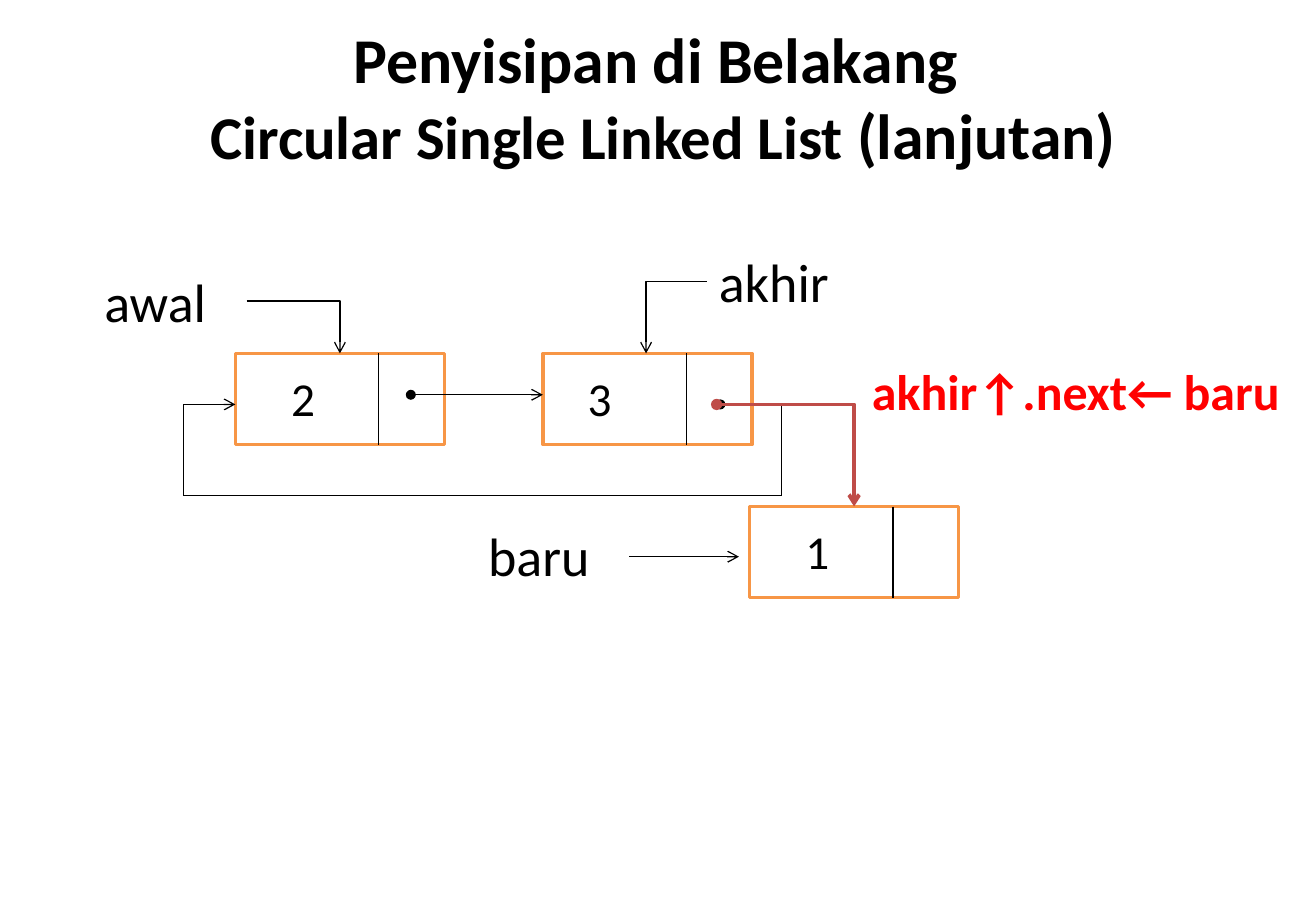
from lxml import etree
from pptx import Presentation
from pptx.dml.color import RGBColor
from pptx.enum.shapes import MSO_CONNECTOR, MSO_SHAPE
from pptx.enum.text import MSO_ANCHOR, PP_ALIGN
from pptx.oxml.ns import qn
from pptx.util import Pt

STRAIGHT, ELBOW = MSO_CONNECTOR.STRAIGHT, MSO_CONNECTOR.ELBOW
RECTANGLE = MSO_SHAPE.RECTANGLE
TOP, MIDDLE = MSO_ANCHOR.TOP, MSO_ANCHOR.MIDDLE
CENTER = PP_ALIGN.CENTER

FONT = "Calibri"
BLACK, WHITE, ORANGE, RED, CRIMSON = "000000", "FFFFFF", "F79646", "FF0000", "BF4C48"
NODE_WIDTH, NODE_HEIGHT, DATA_WIDTH = 124, 54, 85
LIST_TOP, NEW_TOP = 209.5, 300.25
FIRST_LEFT, LAST_LEFT, NEW_LEFT = 139.5, 321.75, 444.25
LOOP_LEFT, LOOP_RIGHT, LOOP_TOP, LOOP_BOTTOM = 108.75, 463, 239.75, 293.75


def color(value):
    """Turn a hex string into a colour."""
    return RGBColor.from_string(value)


def style_font(font, size, ink=BLACK, bold=False):
    """Apply the slide's typeface with a size and colour."""
    font.name = FONT
    font.size = Pt(size)
    font.bold = bold
    font.color.rgb = color(ink)


def add_text_frame(slide, left, top, width, height, anchor=TOP):
    """Add a wrapping text box and return its frame."""
    frame = slide.shapes.add_textbox(Pt(left), Pt(top), Pt(width), Pt(height)).text_frame
    frame.word_wrap = True
    frame.vertical_anchor = anchor
    return frame


def add_title(slide):
    """Add the two-line heading."""
    heading = add_text_frame(slide, 45, 18, 696, 78, MIDDLE).paragraphs[0]
    heading.alignment = CENTER
    style_font(heading.font, 37.8, bold=True)
    heading.add_run().text = "Penyisipan di Belakang "
    heading.add_line_break()
    list_name = heading.add_run()
    list_name.text = "Circular Single Linked List "
    list_name.font.size = Pt(36)
    heading.add_run().text = "(lanjutan)"


def add_label(slide, text, left, top, width=91, height=46, size=32, ink=BLACK, bold=False):
    """Add a one-line label."""
    label = add_text_frame(slide, left, top, width, height).paragraphs[0]
    label.text = text
    style_font(label.font, size, ink, bold)


def add_line(slide, start, end, kind=STRAIGHT, ink=BLACK, weight=0.75, head=None, tail=None):
    """Add a straight or single-bend line with optional ends."""
    link = slide.shapes.add_connector(kind, *map(Pt, start + end))
    link.line.color.rgb = color(ink)
    link.line.width = Pt(weight)
    properties = link._element.spPr
    if kind == ELBOW:
        properties.find(qn("a:prstGeom")).set("prst", "bentConnector2")
    outline = properties.find(qn("a:ln"))
    for tag, end_type in (("a:headEnd", head), ("a:tailEnd", tail)):
        if end_type:
            etree.SubElement(outline, qn(tag), type=end_type)
    etree.SubElement(properties, qn("a:effectLst"))


def add_node(slide, value, left, top, value_left):
    """Add a list node with its value and pointer cell."""
    node = slide.shapes.add_shape(RECTANGLE, Pt(left), Pt(top), Pt(NODE_WIDTH), Pt(NODE_HEIGHT))
    node.shadow.inherit = False
    node.fill.solid()
    node.fill.fore_color.rgb = color(WHITE)
    node.line.color.rgb = color(ORANGE)
    node.line.width = Pt(2)
    divider = left + DATA_WIDTH
    add_line(slide, (divider, top), (divider, top + NODE_HEIGHT))
    add_label(slide, value, value_left, top + 6, 45, 41, 28)


def add_loop(slide):
    """Add the pointer that runs from the last node back to the first."""
    corners = [(427, LOOP_TOP), (LOOP_RIGHT, LOOP_TOP), (LOOP_RIGHT, LOOP_BOTTOM),
               (LOOP_LEFT, LOOP_BOTTOM), (LOOP_LEFT, LOOP_TOP), (FIRST_LEFT, LOOP_TOP)]
    heads = ["oval", None, None, None, None]
    tails = [None, None, None, None, "arrow"]
    for start, end, head, tail in zip(corners, corners[1:], heads, tails):
        add_line(slide, start, end, head=head, tail=tail)


def main():
    """Build the slide and save it."""
    deck = Presentation()
    deck.slide_width, deck.slide_height = Pt(780), Pt(540)
    slide = deck.slides.add_slide(deck.slide_layouts[6])

    add_title(slide)
    for value, left, top, value_left in (("1", NEW_LEFT, NEW_TOP, 470.25),
                                         ("3", LAST_LEFT, LIST_TOP, 341.25),
                                         ("2", FIRST_LEFT, LIST_TOP, 165.5)):
        add_node(slide, value, left, top, value_left)
    for name, left, top in (("baru", 282.25, 306), ("akhir", 419, 144), ("awal", 54.75, 155.5)):
        add_label(slide, name, left, top)
    add_label(slide, "akhir↑.next← baru", 509.75, 210.25, 264.25, 54, 29.6, RED, True)

    add_line(slide, (373, 330), (438, 330), tail="arrow")
    add_line(slide, (243.5, 234), (LAST_LEFT, 234), head="oval", tail="arrow")
    add_line(slide, (419, 167), (383, LIST_TOP), ELBOW, tail="arrow")
    add_line(slide, (146.25, 178.5), (201.5, LIST_TOP), ELBOW, tail="arrow")
    add_loop(slide)
    add_line(slide, (424.75, LOOP_TOP), (506.25, NEW_TOP), ELBOW, CRIMSON, 2.25, "oval", "arrow")

    deck.save("out.pptx")


if __name__ == "__main__":
    main()
